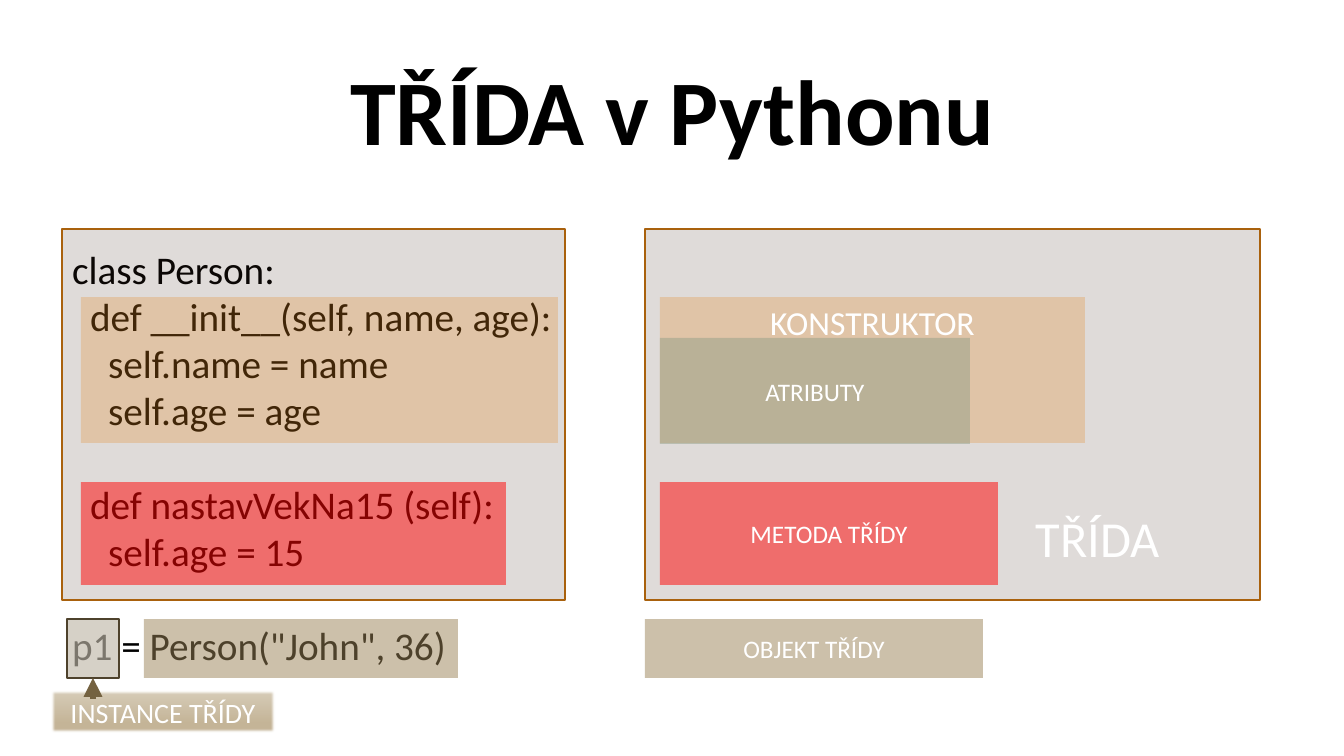
"""Slide explaining the parts of a Python class, with labels beside the code."""
from dataclasses import dataclass

from lxml import etree
from pptx import Presentation
from pptx.dml.color import RGBColor
from pptx.enum.shapes import MSO_CONNECTOR, MSO_SHAPE
from pptx.enum.text import MSO_ANCHOR, MSO_AUTO_SIZE, PP_ALIGN
from pptx.oxml.ns import qn
from pptx.util import Pt

RECT = MSO_SHAPE.RECTANGLE
STRAIGHT = MSO_CONNECTOR.STRAIGHT
TOP, MIDDLE = MSO_ANCHOR.TOP, MSO_ANCHOR.MIDDLE
LEFT, CENTER = PP_ALIGN.LEFT, PP_ALIGN.CENTER
NO_AUTOFIT = MSO_AUTO_SIZE.NONE
BOTTOM_SIDE = 2
SLIDE_W, SLIDE_H = 1344, 756
SCALE = 12192000 / SLIDE_W


@dataclass(frozen=True)
class Theme:
    """Colours, type sizes and font of the slide."""
    font: str = "Calibri"
    ink: str = "000000"
    muted: str = "808080"
    light: str = "FFFFFF"
    panel: str = "432B20"
    panel_edge: str = "A9610D"
    method: str = "FF0000"
    constructor: str = "E48312"
    attributes: str = "94A088"
    object: str = "9B8357"
    instance: str = "746241"
    instance_edge: str = "4E422C"
    label_top: str = "D8CEBA"
    label_bottom: str = "C5B598"
    title_size: int = 66
    class_size: int = 36
    code_size: int = 28
    code_pitch: float = 33.6
    constructor_size: int = 24
    instance_size: int = 20
    label_size: int = 18


def px(length):
    """Turn px into EMU."""
    return round(length * SCALE)


def write(paragraph, text, *, font, size, color, bold=False, align=LEFT):
    """Add a formatted run to a paragraph."""
    paragraph.alignment = align
    run = paragraph.add_run()
    run.text = text
    run.font.name = font
    run.font.size = Pt(size)
    run.font.bold = bold
    run.font.color.rgb = RGBColor.from_string(color)


class ClassSlide:
    """Draws elements on one slide in one theme."""

    def __init__(self, slide, theme):
        self.slide = slide
        self.theme = theme

    def place(self, shape, box):
        """Move a shape to a box given in px."""
        shape.left, shape.top, shape.width, shape.height = map(px, box)

    def title(self, text, box):
        """Fill the title placeholder."""
        heading = self.slide.shapes.title
        self.place(heading, box)
        frame = heading.text_frame
        frame.auto_size = NO_AUTOFIT
        frame.vertical_anchor = MIDDLE
        frame.paragraphs[0].line_spacing = 0.9
        write(frame.paragraphs[0], text, font=self.theme.font, size=self.theme.title_size,
              color=self.theme.ink, bold=True, align=CENTER)

    def code(self, lines, box, step):
        """Fill the body placeholder with (depth, blank lines before, runs)."""
        body = self.slide.placeholders[1]
        self.place(body, box)
        frame = body.text_frame
        frame.auto_size = NO_AUTOFIT
        frame.vertical_anchor = TOP
        for number, (depth, blanks, runs) in enumerate(lines):
            line = frame.add_paragraph() if number else frame.paragraphs[0]
            line.line_spacing = Pt(self.theme.code_pitch)
            line.space_before = Pt(self.theme.code_pitch * blanks)
            line.space_after = Pt(0)
            for text, color in runs:
                write(line, text, font=self.theme.font, size=self.theme.code_size, color=color)
            properties = line._p.get_or_add_pPr()
            properties.set("marL", str(px(step * depth)))
            properties.set("indent", "0")
            etree.SubElement(properties, qn("a:buNone"))

    def block(self, box, color, opacity, edge=None, text="", size=None, anchor=MIDDLE):
        """Add a translucent rectangle with optional outline and text."""
        block = self.slide.shapes.add_shape(RECT, *map(px, box))
        block.shadow.inherit = False
        block.fill.solid()
        block.fill.fore_color.rgb = RGBColor.from_string(color)
        tint = block._element.spPr.find(qn("a:solidFill"))[0]
        etree.SubElement(tint, qn("a:alpha"), val=str(opacity * 1000))
        if edge:
            block.line.color.rgb = RGBColor.from_string(edge)
            block.line.width = Pt(1)
        else:
            block.line.fill.background()
        if text:
            self.caption(block, text, size or self.theme.label_size, anchor)
        return block

    def caption(self, shape, text, size, anchor=MIDDLE):
        """Write white centred text in a shape."""
        frame = shape.text_frame
        frame.word_wrap = True
        frame.vertical_anchor = anchor
        write(frame.paragraphs[0], text, font=self.theme.font, size=size,
              color=self.theme.light, align=CENTER)

    def note(self, text, box, size):
        """Add a text box with white centred text."""
        self.caption(self.slide.shapes.add_textbox(*map(px, box)), text, size)

    def soft_label(self, text, box, size):
        """Add a gradient label with soft edges."""
        label = self.slide.shapes.add_shape(RECT, *map(px, box))
        label.shadow.inherit = False
        label.line.fill.background()
        label.fill.gradient()
        label.fill.gradient_angle = 270
        stops = ((0, self.theme.label_top), (0.74, self.theme.label_bottom))
        for stop, (position, color) in zip(label.fill.gradient_stops, stops):
            stop.position = position
            stop.color.rgb = RGBColor.from_string(color)
        effects = label._element.spPr.find(qn("a:effectLst"))
        etree.SubElement(effects, qn("a:softEdge"), rad=str(Pt(2)))
        self.caption(label, text, size)

    def arrow_up(self, start, target, color):
        """Add an arrow that ends at the bottom side of a target."""
        x, y = map(px, start)
        arrow = self.slide.shapes.add_connector(STRAIGHT, x, y, x, y)
        arrow.end_connect(target, BOTTOM_SIDE)
        arrow.line.color.rgb = RGBColor.from_string(color)
        arrow.line.width = Pt(4.5)
        etree.SubElement(arrow.line._get_or_add_ln(), qn("a:tailEnd"), type="triangle")
        etree.SubElement(arrow._element.spPr, qn("a:effectLst"))


def main():
    """Build the slide and save it."""
    deck = Presentation()
    deck.slide_width, deck.slide_height = px(SLIDE_W), px(SLIDE_H)
    theme = Theme()
    page = ClassSlide(deck.slides.add_slide(deck.slide_layouts[1]), theme)

    page.title("TŘÍDA v Pythonu", (93, 40, 1159, 151))
    page.code([
        (0, 0, [("class Person:", theme.ink)]),
        (1, 0, [("def __init__(self, name, age):", theme.ink)]),
        (2, 0, [("self.name = name", theme.ink)]),
        (2, 0, [("self.age = age", theme.ink)]),
        (1, 1, [("def nastavVekNa15 (self):", theme.ink)]),
        (2, 0, [("self.age = 15", theme.ink)]),
        (0, 1, [("p1", theme.muted), (' = Person("John", 36)', theme.ink)]),
    ], (62, 240, 1219, 500), step=18)

    code_x, label_x, panel_x = 81, 660, 645
    object_y, object_h = 619, 59
    page.block((panel_x, object_y, 338, object_h), theme.object, 50, text="OBJEKT TŘÍDY")
    for x, width in ((panel_x, 615), (62, 503)):
        page.block((x, 229, width, 371), theme.panel, 17, edge=theme.panel_edge)
    for x, width, text in ((code_x, 425, ""), (label_x, 338, "METODA TŘÍDY")):
        page.block((x, 482, width, 103), theme.method, 50, text=text)
    for x, width, text in ((code_x, 477, ""), (label_x, 425, "KONSTRUKTOR")):
        page.block((x, 297, width, 146), theme.constructor, 25, text=text,
                   size=theme.constructor_size, anchor=TOP)
    page.block((label_x, 338, 310, 106), theme.attributes, 50, text="ATRIBUTY")
    page.note("TŘÍDA", (1008, 500, 180, 74), theme.class_size)

    page.soft_label("INSTANCE TŘÍDY", (50, 690, 226, 44), theme.instance_size)
    instance = page.block((67, object_y, 52, object_h), theme.instance, 29,
                          edge=theme.instance_edge)
    page.arrow_up((93, 699), instance, theme.instance)
    page.block((144, object_y, 314, object_h), theme.object, 50)
    deck.save("out.pptx")


if __name__ == "__main__":
    main()
